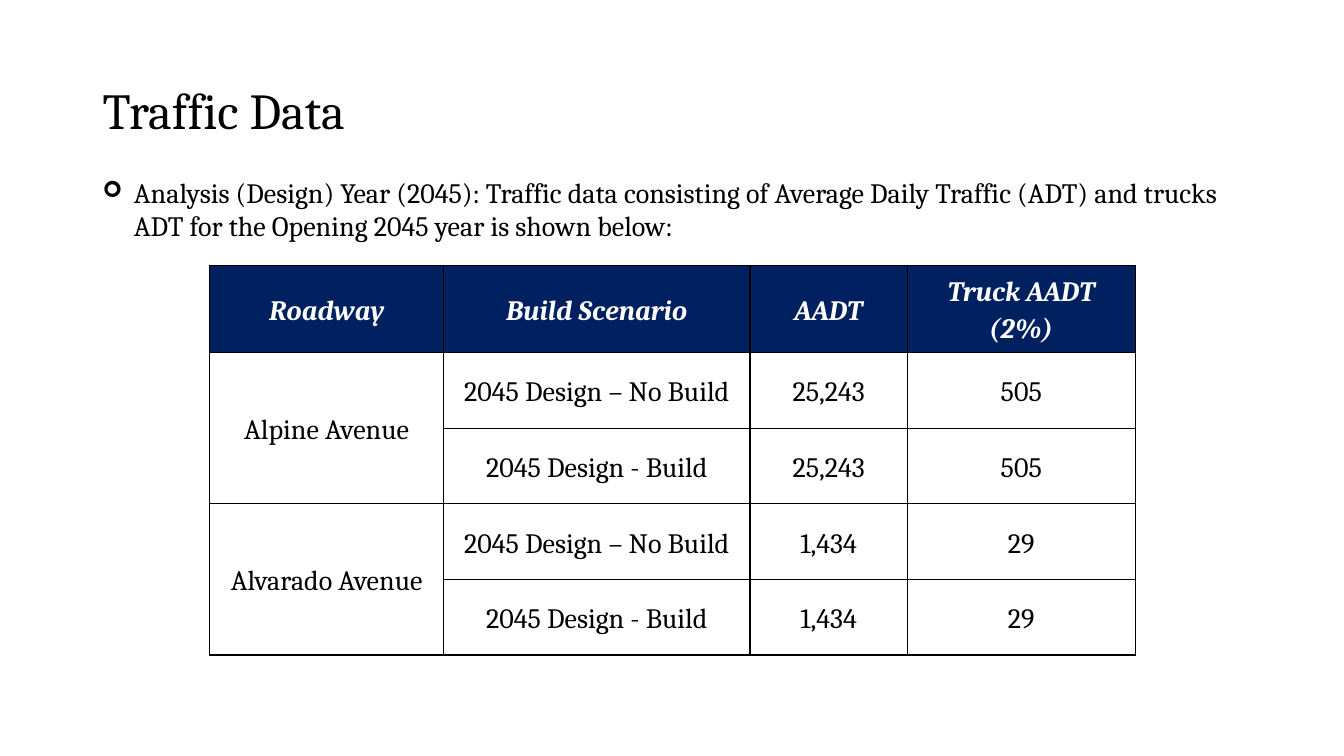
from pptx import Presentation
from pptx.dml.color import RGBColor
from pptx.enum.text import MSO_ANCHOR, PP_ALIGN
from pptx.oxml import parse_xml
from pptx.oxml.ns import nsdecls
from pptx.util import Inches, Pt

BLACK = RGBColor(0x00, 0x00, 0x00)
WHITE = RGBColor(0xFF, 0xFF, 0xFF)
NAVY = RGBColor(0x00, 0x20, 0x60)

HEADINGS = ("Roadway", "Build Scenario", "AADT", "Truck AADT (2%)")
SCENARIOS = ("2045 Design – No Build", "2045 Design - Build")
TRAFFIC = (("Alpine Avenue", "25,243", "505"), ("Alvarado Avenue", "1,434", "29"))
COLUMN_WIDTHS = (2.32, 3.04, 1.56, 2.26)
ROW_HEIGHT = 0.75


def write(frame, text, size=20, color=BLACK, font="Cambria", bold=False,
          italic=False, align=PP_ALIGN.LEFT, spacing=1.0):
    paragraph = frame.paragraphs[0]
    paragraph.alignment = align
    paragraph.line_spacing = spacing
    run = paragraph.add_run()
    run.text = text
    run.font.name = font
    run.font.size = Pt(size)
    run.font.bold = bold
    run.font.italic = italic
    run.font.color.rgb = color
    return paragraph


class TrafficSlide:
    """Draws the traffic data slide in one consistent style."""

    def __init__(self, slide):
        self.slide = slide

    def text(self, left, top, width, height, text, anchor=MSO_ANCHOR.TOP, **style):
        box = self.slide.shapes.add_textbox(
            Inches(left), Inches(top), Inches(width), Inches(height))
        frame = box.text_frame
        frame.word_wrap = True
        frame.vertical_anchor = anchor
        return write(frame, text, **style)

    def bullet(self, left, top, width, height, text):
        paragraph = self.text(left, top, width, height, text)
        paragraph.space_before = paragraph.space_after = Pt(3)
        properties = paragraph._p.get_or_add_pPr()
        properties.set("marL", str(Inches(0.31)))
        properties.set("indent", str(Inches(-0.31)))
        for tag in ('buSzPct val="80000"', 'buFont typeface="Wingdings"', 'buChar char="➢"'):
            properties.append(parse_xml(f"<a:{tag} {nsdecls('a')}/>"))

    def cell(self, cell, text, header=False):
        cell.vertical_anchor = MSO_ANCHOR.MIDDLE
        properties = cell._tc.get_or_add_tcPr()
        for side in "LRTB":
            properties.append(parse_xml(
                f'<a:ln{side} w="{Pt(1)}" {nsdecls("a")}><a:solidFill>'
                f'<a:srgbClr val="{BLACK}"/></a:solidFill></a:ln{side}>'))
        if header:
            cell.fill.solid()
            cell.fill.fore_color.rgb = NAVY
        else:
            cell.fill.background()
        if text:
            write(cell.text_frame, text, color=WHITE if header else BLACK,
                  bold=header, italic=header, align=PP_ALIGN.CENTER, spacing=1.15)

    def table(self, left, top, rows):
        table = self.slide.shapes.add_table(
            len(rows), len(COLUMN_WIDTHS), Inches(left), Inches(top),
            Inches(sum(COLUMN_WIDTHS)), Inches(ROW_HEIGHT * len(rows))).table
        table.first_row = table.horz_banding = False
        for column, width in zip(table.columns, COLUMN_WIDTHS):
            column.width = Inches(width)
        for row_index, row in enumerate(rows):
            for column_index, text in enumerate(row):
                self.cell(table.cell(row_index, column_index), text, header=row_index == 0)
        for first in range(1, len(rows), len(SCENARIOS)):
            table.cell(first, 0).merge(table.cell(first + len(SCENARIOS) - 1, 0))


def main():
    presentation = Presentation()
    presentation.slide_width = Inches(13.33)
    presentation.slide_height = Inches(7.5)
    page = TrafficSlide(presentation.slides.add_slide(presentation.slide_layouts[6]))

    page.text(0.92, 0.4, 11.5, 1.45, "Traffic Data", anchor=MSO_ANCHOR.MIDDLE,
              size=36, spacing=0.9)
    page.bullet(0.92, 1.69, 11.5, 0.77,
                "Analysis (Design) Year (2045): Traffic data consisting of Average Daily "
                "Traffic (ADT) and trucks ADT for the Opening 2045 year is shown below:")
    rows = [HEADINGS]
    for roadway, aadt, trucks in TRAFFIC:
        for index, scenario in enumerate(SCENARIOS):
            rows.append((roadway if index == 0 else "", scenario, aadt, trucks))
    page.table(2.08, 2.63, rows)
    presentation.save("out.pptx")


if __name__ == "__main__":
    main()
